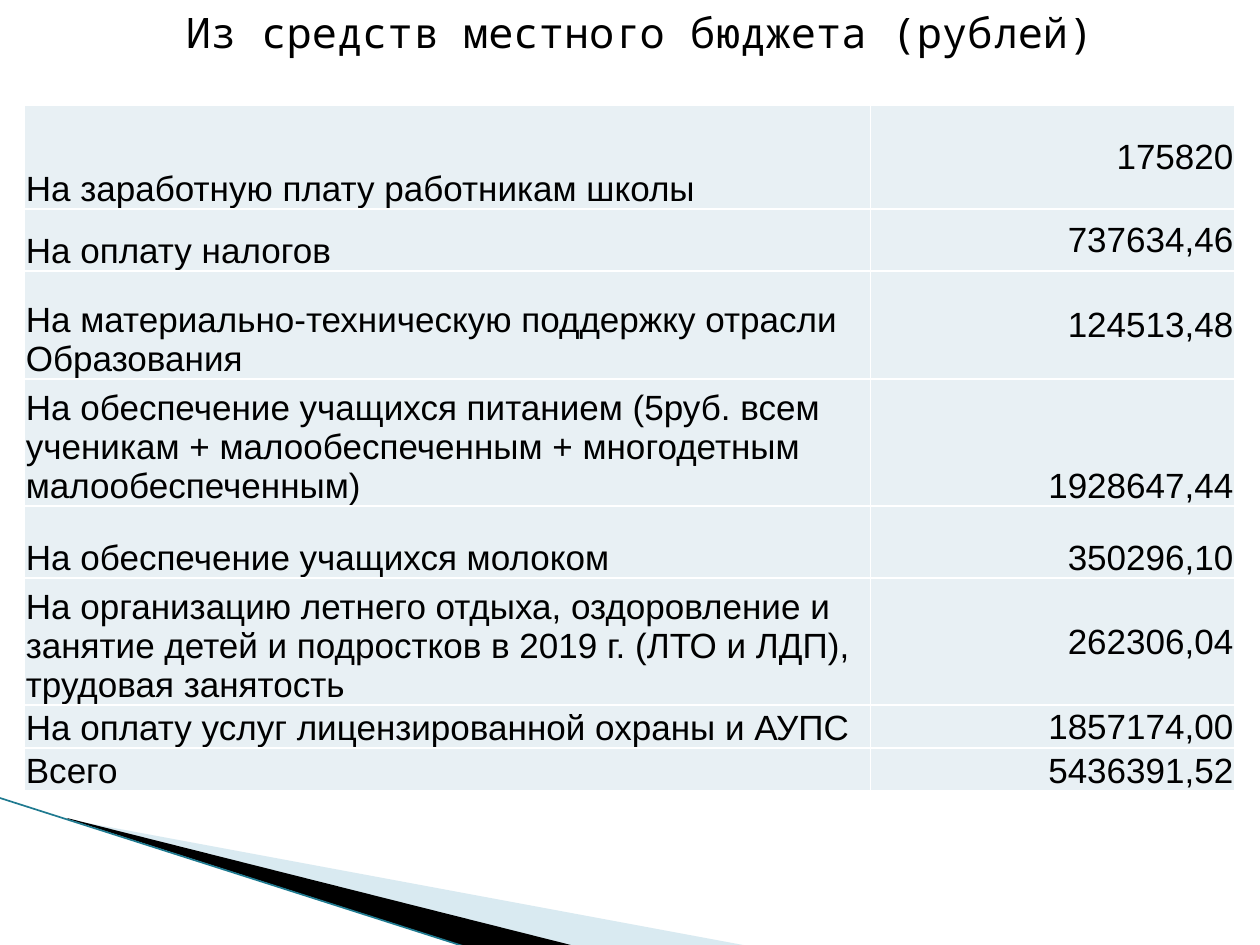
import pptx
import pptx.dml.color
import pptx.enum.shapes
import pptx.enum.text
import pptx.oxml
import pptx.oxml.ns
import pptx.util
from lxml import etree

Pt = pptx.util.Pt
Anchor = pptx.enum.text.MSO_ANCHOR
Align = pptx.enum.text.PP_ALIGN

# Content: label, amount, amount anchor, row height
TITLE = "Из средств местного бюджета (рублей)"
ROWS = [
    ("На заработную плату работникам школы", "175820", Anchor.MIDDLE, 59.2),
    ("На оплату налогов", "737634,46", Anchor.MIDDLE, 35.4),
    ("На материально-техническую поддержку отрасли Образования",
     "124513,48", Anchor.MIDDLE, 61.8),
    ("На обеспечение учащихся питанием (5руб. всем ученикам + "
     "малообеспеченным + многодетным малообеспеченным)",
     "1928647,44", Anchor.BOTTOM, 72.6),
    ("На обеспечение учащихся молоком", "350296,10", Anchor.BOTTOM, 41),
    ("На организацию летнего отдыха, оздоровление и занятие детей и "
     "подростков в 2019 г. (ЛТО и ЛДП), трудовая занятость",
     "262306,04", Anchor.MIDDLE, 72.8),
    ("На оплату услуг лицензированной охраны и АУПС",
     "1857174,00", Anchor.MIDDLE, 24.6),
    ("Всего", "5436391,52", Anchor.BOTTOM, 24.5),
]
COLUMN_WIDTHS = (483.5, 208)

# Corner wedges: frame, points, colour, opacity in percent
WEDGES = [
    ((56.2, 393.8, 299.5, 113.8),
     [(39.6, 468.4), (428.4, 540.7), (328.3, 540.7), (39.6, 468)], "A0CBDC", 40),
    ((-4.3, 455.8, 299.5, 66.2),
     [(38.5, 467.5), (329, 540.7), (267.8, 541.4), (38.9, 468)], "000000", 100),
]


def colour(value):
    return pptx.dml.color.RGBColor.from_string(value)


def style_text(paragraph, font, size, align):
    paragraph.alignment = align
    paragraph.font.name = font
    paragraph.font.size = Pt(size)
    paragraph.font.bold = False
    paragraph.font.color.rgb = colour("000000")


def set_frame(wedge, frame):
    """Give the wedge its frame while its outline stays in place."""
    left, top, width, height = [Pt(length) for length in frame]
    shift_x, shift_y = wedge.left - left, wedge.top - top
    for outline in wedge._element.xpath(".//a:path"):
        outline.set("w", str(width))
        outline.set("h", str(height))
    for point in wedge._element.xpath(".//a:pt"):
        point.set("x", str(int(point.get("x")) + shift_x))
        point.set("y", str(int(point.get("y")) + shift_y))
    wedge.left, wedge.top, wedge.width, wedge.height = left, top, width, height


def add_wedge(slide, frame, points, fill, opacity):
    corners = [(Pt(x), Pt(y)) for x, y in points]
    builder = slide.shapes.build_freeform(*corners[0], scale=1.0)
    builder.add_line_segments(corners[1:], close=True)
    wedge = builder.convert_to_shape()
    set_frame(wedge, frame)
    wedge.shadow.inherit = False
    wedge.fill.solid()
    wedge.fill.fore_color.rgb = colour(fill)
    wedge.line.fill.background()
    if opacity < 100:
        tone = wedge.fill._xPr.find(".//" + pptx.oxml.ns.qn("a:srgbClr"))
        etree.SubElement(tone, pptx.oxml.ns.qn("a:alpha"), val=str(opacity * 1000))


def add_borders(cell, value, width):
    properties = cell._tc.get_or_add_tcPr()
    for side in ("lnL", "lnR", "lnT", "lnB"):
        properties.append(pptx.oxml.parse_xml(
            f'<a:{side} {pptx.oxml.ns.nsdecls("a")} w="{Pt(width)}"><a:solidFill>'
            f'<a:srgbClr val="{value}"/></a:solidFill></a:{side}>'))


def fill_cell(cell, text, anchor, align):
    cell.text = text
    cell.vertical_anchor = anchor
    cell.margin_left = cell.margin_right = cell.margin_top = Pt(0.7)
    cell.margin_bottom = Pt(0)
    add_borders(cell, "FFFFFF", 1)
    cell.fill.solid()
    cell.fill.fore_color.rgb = colour("E8F0F4")
    style_text(cell.text_frame.paragraphs[0], "Arial", 20, align)


deck = pptx.Presentation()
deck.slide_width, deck.slide_height = Pt(720), Pt(540)
page = deck.slides.add_slide(deck.slide_layouts[5])

# Corner decoration
for frame, points, fill, opacity in WEDGES:
    add_wedge(page, frame, points, fill, opacity)
edge = page.shapes.add_connector(
    pptx.enum.shapes.MSO_CONNECTOR.STRAIGHT, Pt(-0.7), Pt(455.8), Pt(267.1), Pt(541.4))
edge.line.color.rgb = colour("1F7A90")
edge.line.width = Pt(0.95)
etree.SubElement(edge._element.spPr, pptx.oxml.ns.qn("a:effectLst"))

# Title
title = page.shapes.title
title.left, title.top, title.width, title.height = Pt(99), Pt(0), Pt(545.8), Pt(65.5)
title.text_frame.text = TITLE
title.text_frame.word_wrap = True
title.text_frame.auto_size = pptx.enum.text.MSO_AUTO_SIZE.NONE
title.text_frame.vertical_anchor = Anchor.TOP
style_text(title.text_frame.paragraphs[0], "Noto Sans Mono", 24, Align.LEFT)

# Budget table
table = page.shapes.add_table(
    len(ROWS), len(COLUMN_WIDTHS), Pt(14.1), Pt(60.2),
    Pt(sum(COLUMN_WIDTHS)), Pt(sum(row[3] for row in ROWS))).table
table.first_row = table.horz_banding = False
for column, width in zip(table.columns, COLUMN_WIDTHS):
    column.width = Pt(width)
for index, (label, amount, anchor, height) in enumerate(ROWS):
    table.rows[index].height = Pt(height)
    fill_cell(table.cell(index, 0), label, Anchor.BOTTOM, Align.LEFT)
    fill_cell(table.cell(index, 1), amount, anchor, Align.RIGHT)

deck.save("out.pptx")
